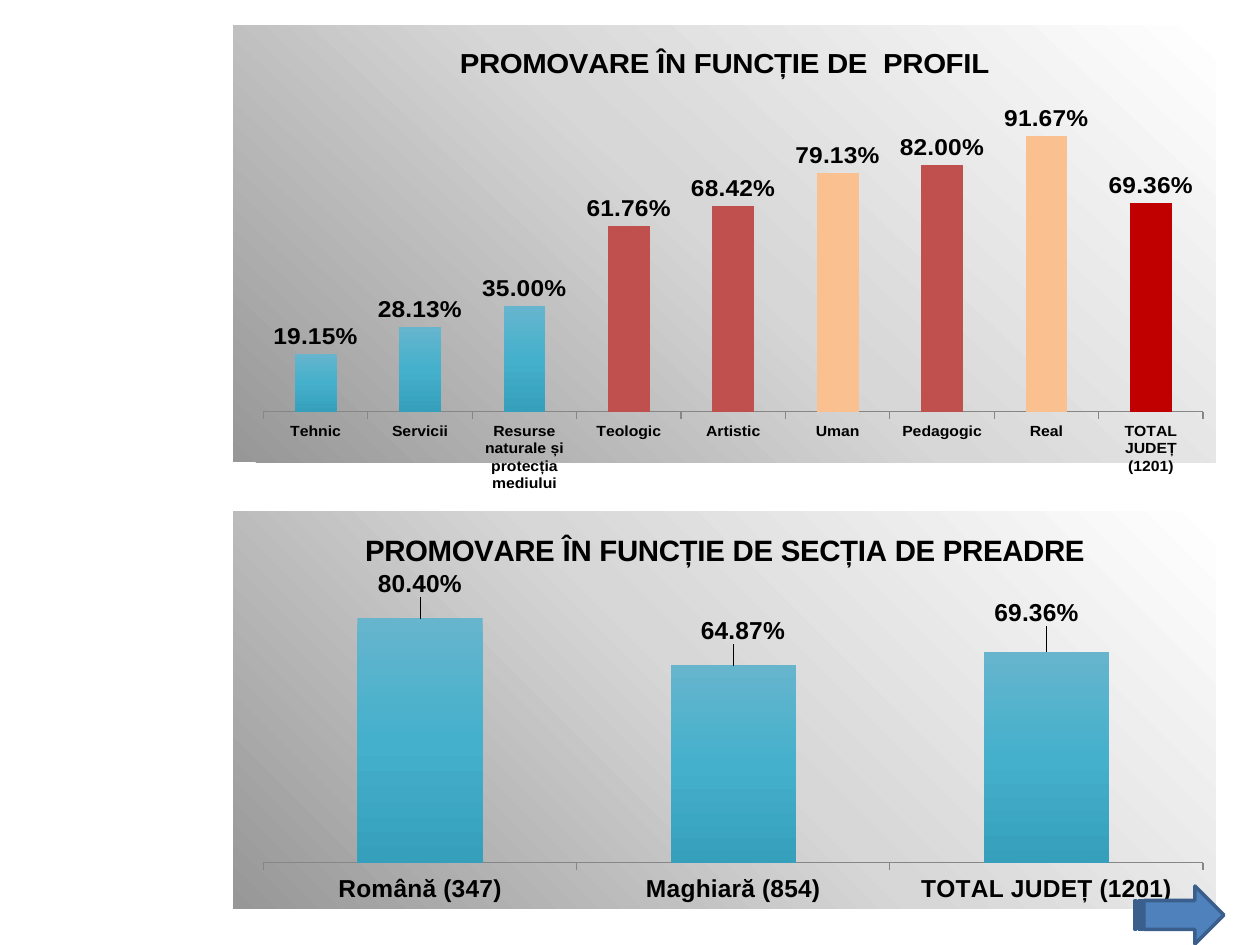
"""Build a slide with two column charts of pass rates and a forward arrow."""
from lxml import etree
from pptx import Presentation
from pptx import util as u
from pptx.chart.data import CategoryChartData
from pptx.dml.color import RGBColor
from pptx.enum import chart as ch, shapes
from pptx.oxml import ns

PX = 914400 / 126
BACK = ["979797", "D7D7D7", "FFFFFF"]
TEAL = ["66B5CD", "45B0CC", "36A0BC"]
RED, PEACH, DARK = "C0504D", "FAC090", "C00000"


def rgb(value):
    return RGBColor.from_string(value)


def add(parent, tag, **attrs):
    e = etree.SubElement(parent, ns.qn(tag))
    for name, value in attrs.items():
        e.set(name, str(value))
    return e


charts = [
    dict(title="PROMOVARE ÎN FUNCȚIE DE SECȚIA DE PREADRE",
         box=(233, 512, 983, 397), top=0.9, size=14,
         rates={"Română (347)": 0.804, "Maghiară (854)": 0.6487, "TOTAL JUDEȚ (1201)": 0.6936},
         points={}, shifts=[(0, -0.04), (0.01, -0.04), (-0.01, -0.05)]),
    dict(title="PROMOVARE ÎN FUNCȚIE DE  PROFIL",
         box=(233, 26, 983, 466), top=1, size=9,
         rates={"Tehnic": 0.1915, "Servicii": 0.2813,
                "Resurse naturale și protecția mediului": 0.35,
                "Teologic": 0.6176, "Artistic": 0.6842, "Uman": 0.7913,
                "Pedagogic": 0.82, "Real": 0.9167, "TOTAL JUDEȚ (1201)": 0.6936},
         points={3: RED, 4: RED, 5: PEACH, 6: RED, 7: PEACH, 8: DARK}, shifts=[]),
]

prs = Presentation()
prs.slide_width, prs.slide_height = u.Inches(10), u.Inches(7.5)
s = prs.slides.add_slide(prs.slide_layouts[6])

for c in charts:
    data = CategoryChartData(number_format="0.00%")
    data.categories = list(c["rates"])
    data.add_series("Series 1", list(c["rates"].values()))
    box = [int(v * PX) for v in c["box"]]
    chart = s.shapes.add_chart(ch.XL_CHART_TYPE.COLUMN_CLUSTERED, *box, data).chart
    chart.has_legend = False
    chart.font.name, chart.font.size, chart.font.bold = "Arial", u.Pt(14), True
    chart.font.color.rgb = rgb("000000")

    chart.has_title = True
    tf = chart.chart_title.text_frame
    tf.text = c["title"]
    font = tf.paragraphs[0].runs[0].font
    font.name, font.size, font.bold = "Arial", u.Pt(16.8), True
    font.color.rgb = rgb("000000")

    axis = chart.value_axis
    axis.visible = axis.has_major_gridlines = False
    axis.minimum_scale, axis.maximum_scale = 0, c["top"]
    axis = chart.category_axis
    axis.major_tick_mark = ch.XL_TICK_MARK.OUTSIDE
    axis.format.line.color.rgb = rgb("868686")
    axis.tick_labels.font.size = u.Pt(c["size"])
    axis.tick_labels.font.bold = True

    plot = chart.plots[0]
    plot.gap_width, plot.vary_by_categories = 150, False
    series = plot.series[0]
    labels = series.data_labels
    labels.show_value = True
    labels.number_format, labels.number_format_is_linked = "0.00%", False
    labels.position = ch.XL_LABEL_POSITION.OUTSIDE_END
    for i, color in c["points"].items():
        fill = series.points[i].format.fill
        fill.solid()
        fill.fore_color.rgb = rgb(color)

    for i, (x, y) in enumerate(c["shifts"]):
        series.points[i].data_label.position = ch.XL_LABEL_POSITION.OUTSIDE_END
        idx = series.format.element.xpath(f".//c:dLbl/c:idx[@val='{i}']")[0]
        layout = etree.Element(ns.qn("c:layout"))
        manual = add(layout, "c:manualLayout")
        add(manual, "c:x", val=x)
        add(manual, "c:y", val=y)
        idx.addnext(layout)

    area = chart.element.xpath("c:chart/c:plotArea")[0]
    for old in area.xpath("c:layout"):
        area.remove(old)
    layout = etree.Element(ns.qn("c:layout"))
    manual = add(layout, "c:manualLayout")
    for name, value in dict(layoutTarget="inner", xMode="edge", yMode="edge",
                            x=0.031, y=0.194, w=0.956, h=0.69).items():
        add(manual, f"c:{name}", val=value)
    area.insert(0, layout)

    back = etree.Element(ns.qn("c:spPr"))
    chart.element.xpath("c:chart")[0].addnext(back)
    bars = series.format.element.get_or_add_spPr()
    for props, colors, angle in ((back, BACK, 315), (bars, TEAL, 90)):
        grad = add(props, "a:gradFill", rotWithShape=1)
        stops = add(grad, "a:gsLst")
        for i, color in enumerate(colors):
            add(add(stops, "a:gs", pos=i * 50000), "a:srgbClr", val=color)
        add(grad, "a:lin", ang=angle * 60000, scaled=0)
        add(add(props, "a:ln"), "a:noFill")

box = [int(v * PX) for v in (1135, 886, 89, 58)]
arrow = s.shapes.add_shape(shapes.MSO_SHAPE.STRIPED_RIGHT_ARROW, *box)
arrow.shadow.inherit = False
arrow.fill.solid()
arrow.fill.fore_color.rgb = rgb("4F81BD")
arrow.line.color.rgb = rgb("3A5F8C")
arrow.line.width = u.Pt(2)

prs.save("out.pptx")
